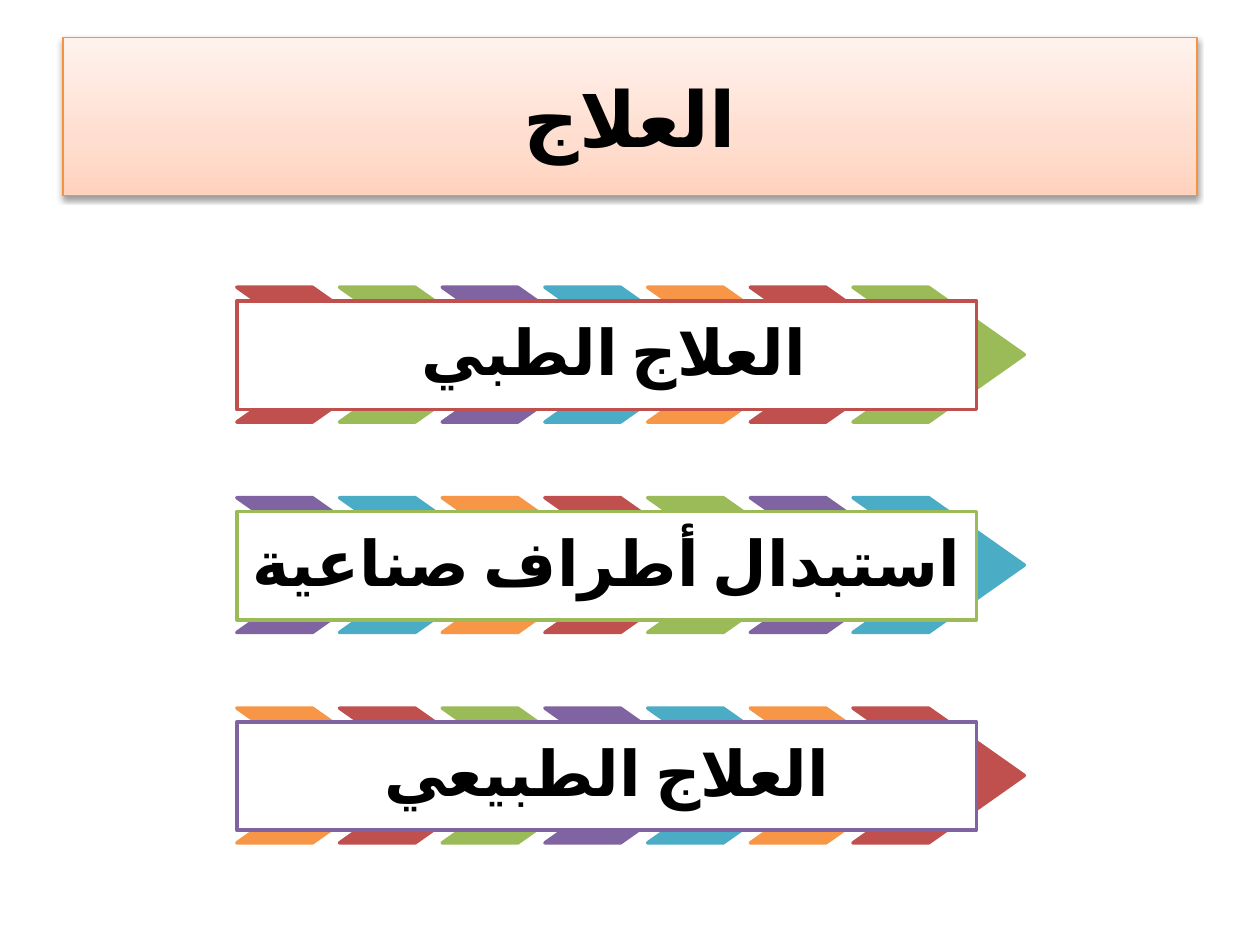
"""Build a slide listing three treatments on rows of coloured chevrons."""
from lxml.etree import fromstring
from pptx import Presentation
from pptx.dml.color import RGBColor
from pptx.enum.shapes import MSO_SHAPE
from pptx.enum.text import MSO_ANCHOR, MSO_AUTO_SIZE, PP_ALIGN
from pptx.util import Inches, Pt

TITLE = "العلاج"
TREATMENTS = ["العلاج الطبي ", "استبدال أطراف صناعية", "العلاج الطبيعي"]

THEME = {
    "font": "Calibri",
    "language": "ar-EG",
    "text": "000000",
    "paper": "FFFFFF",
    "title_size": 44,
    "row_size": 36,
    "title_line": "F69240",
    "title_stops": [(0, "FFD2BD"), (35, "FFDED0"), (100, "FFF2ED")],
    "accents": ["C0504D", "9BBB59", "8064A2", "4BACC6", "F79646"],
}
NAMESPACE = 'xmlns:a="http://schemas.openxmlformats.org/drawingml/2006/main"'

LEFT, TOP, ROW_STEP = 1.88, 2.28, 1.67
CHEVRON_COUNT, CHEVRON_STEP = 7, 0.815
CHEVRON_WIDTH, CHEVRON_HEIGHT, CHEVRON_POINT = 1.36, 1.07, 0.71
LABEL_WIDTH, LABEL_HEIGHT, LABEL_OFFSET = 5.87, 0.86, 0.11


def accent(index):
    return THEME["accents"][index % len(THEME["accents"])]


def write_text(shape, text, size, margin=0.1, line_spacing=None, space_after=None):
    frame = shape.text_frame
    frame.word_wrap = True
    frame.auto_size = MSO_AUTO_SIZE.NONE
    frame.vertical_anchor = MSO_ANCHOR.MIDDLE
    frame.margin_left = frame.margin_right = Inches(margin)
    frame.margin_top = frame.margin_bottom = Inches(margin)
    para = frame.paragraphs[0]
    para.alignment = PP_ALIGN.CENTER
    properties = para._p.get_or_add_pPr()
    properties.set("rtl", "1")
    if line_spacing:
        para.line_spacing = line_spacing
    if space_after:
        properties.append(fromstring(
            f'<a:spcAft {NAMESPACE}><a:spcPct val="{space_after * 1000}"/></a:spcAft>'))
    span = para.add_run()
    span.text = text
    span.font.name = THEME["font"]
    span.font.size = Pt(size)
    span.font.bold = True
    span.font.color.rgb = RGBColor.from_string(THEME["text"])
    run_properties = span._r.get_or_add_rPr()
    run_properties.set("lang", THEME["language"])
    run_properties.append(fromstring(f'<a:cs {NAMESPACE} typeface="{THEME["font"]}"/>'))


def set_line(shape, colour, width):
    shape.line.color.rgb = RGBColor.from_string(colour)
    shape.line.width = Pt(width)


def add_block(page, kind, left, top, width, height, fill, line):
    shape = page.shapes.add_shape(
        kind, Inches(left), Inches(top), Inches(width), Inches(height))
    shape.shadow.inherit = False
    shape.fill.solid()
    shape.fill.fore_color.rgb = RGBColor.from_string(fill)
    set_line(shape, line, 2)
    return shape


def format_title(title):
    title.left, title.top = Inches(0.5), Inches(0.3)
    title.width, title.height = Inches(9), Inches(1.25)
    stops = "".join(
        f'<a:gs pos="{position * 1000}"><a:srgbClr val="{colour}"/></a:gs>'
        for position, colour in THEME["title_stops"])
    properties = title._element.spPr
    properties.append(fromstring(
        f'<a:gradFill {NAMESPACE} rotWithShape="1"><a:gsLst>{stops}</a:gsLst>'
        '<a:lin ang="16200000" scaled="1"/></a:gradFill>'))
    set_line(title, THEME["title_line"], 0.75)
    properties.append(fromstring(
        f'<a:effectLst {NAMESPACE}><a:outerShdw blurRad="{Pt(3.1)}" dist="{Pt(1.6)}" '
        'dir="5400000" rotWithShape="0"><a:srgbClr val="000000">'
        '<a:alpha val="38000"/></a:srgbClr></a:outerShdw></a:effectLst>'))
    write_text(title, TITLE, THEME["title_size"])


def add_treatment(page, row, text):
    top = TOP + row * ROW_STEP
    for column in range(CHEVRON_COUNT):
        colour = accent(2 * row + column)
        chevron = add_block(
            page, MSO_SHAPE.CHEVRON, LEFT + column * CHEVRON_STEP, top,
            CHEVRON_WIDTH, CHEVRON_HEIGHT, colour, colour)
        chevron.adjustments[0] = CHEVRON_POINT
    label = add_block(
        page, MSO_SHAPE.RECTANGLE, LEFT, top + LABEL_OFFSET,
        LABEL_WIDTH, LABEL_HEIGHT, THEME["paper"], accent(row))
    write_text(label, text, THEME["row_size"], line_spacing=0.9, space_after=35)


def main():
    deck = Presentation()
    deck.slide_width, deck.slide_height = Inches(10), Inches(7.5)
    page = deck.slides.add_slide(deck.slide_layouts[5])
    format_title(page.shapes.title)
    for row, text in enumerate(TREATMENTS):
        add_treatment(page, row, text)
    deck.save("out.pptx")


if __name__ == "__main__":
    main()
